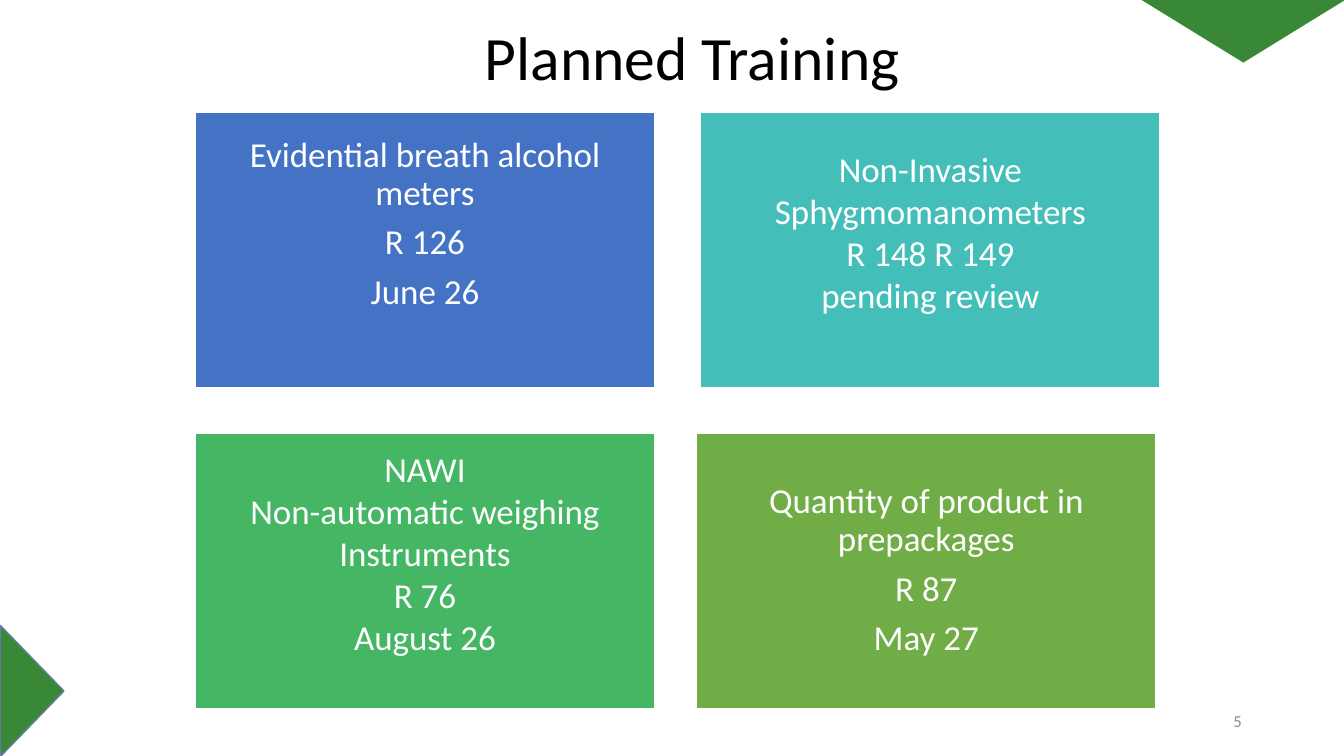
"""Build the Planned Training slide with four course cards."""
from pptx import Presentation
from pptx.dml.color import RGBColor
from pptx.enum import shapes, text
from pptx.util import Pt

ALIGN = text.PP_ALIGN
SHAPE = shapes.MSO_SHAPE


def colour(value):
    return RGBColor.from_string(value)


def write(frame, lines, size, ink, font="Calibri", align=ALIGN.LEFT, spacing=1.0, gap=0):
    frame.word_wrap = True
    frame.vertical_anchor = text.MSO_ANCHOR.MIDDLE
    for index, line in enumerate(lines):
        para = frame.add_paragraph() if index else frame.paragraphs[0]
        para.alignment = align
        para.line_spacing = spacing
        para.space_before = Pt(gap if index else 0)
        span = para.add_run()
        span.text = line
        span.font.name = font
        span.font.size = Pt(size)
        span.font.color.rgb = colour(ink)


class Page:
    green = "388838"
    white = "FFFFFF"
    card_size = (328.3, 196.6)

    def __init__(self, deck):
        self.slide = deck.slides.add_slide(deck.slide_layouts[6])

    def shape(self, kind, place, fill, line=None, rotation=0):
        shape = self.slide.shapes.add_shape(kind, *map(Pt, place))
        shape.shadow.inherit = False
        shape.rotation = rotation
        shape.fill.solid()
        shape.fill.fore_color.rgb = colour(fill)
        if line:
            shape.line.color.rgb = colour(line)
            shape.line.width = Pt(1)
        else:
            shape.line.fill.background()
        return shape

    def corner(self, place, rotation, line=None):
        self.shape(SHAPE.FLOWCHART_EXTRACT, place, self.green, line, rotation)

    def label(self, place, line, size, ink, **style):
        box = self.slide.shapes.add_textbox(*map(Pt, place))
        write(box.text_frame, [line], size, ink, **style)

    def card(self, left, top, fill, lines, below=0, **style):
        box = self.shape(SHAPE.RECTANGLE, (left, top, *self.card_size), fill, self.white)
        frame = box.text_frame
        frame.margin_left = frame.margin_right = frame.margin_top = Pt(7.2)
        frame.margin_bottom = Pt(7.2 + below)
        write(frame, lines, 25, self.white, align=ALIGN.CENTER, **style)


def main():
    deck = Presentation()
    deck.slide_width, deck.slide_height = Pt(960), Pt(540)
    page = Page(deck)
    page.corner((814.3, -0.7, 147.6, 45.4), 180)
    page.corner((-23.8, 470.9, 93.6, 45.4), 90, "657D9D")
    page.label((339.1, 7.2, 573.8, 72.7), "Planned Training", 44, "000000", spacing=0.9)
    page.label((678.2, 500.4, 216, 28.8), "5", 12, "8C8C8C", align=ALIGN.RIGHT)

    left, upper, lower = 139.4, 80.2, 309.6
    spaced = {"spacing": 0.9, "gap": 8.5}
    page.card(left, upper, "4472C4",
              ["Evidential breath alcohol meters", "R 126", "June 26"], below=36, **spaced)
    page.card(500.4, upper, "43BEB9",
              ["Non-Invasive Sphygmomanometers", "R 148 R 149", "pending review"], below=26)
    page.card(left, lower, "45B664",
              ["NAWI", "Non-automatic weighing", "Instruments", "R 76", "August 26"], below=26)
    page.card(497.5, lower, "70AD47",
              ["Quantity of product in prepackages", "R 87", "May 27"], **spaced)
    deck.save("out.pptx")


if __name__ == "__main__":
    main()
